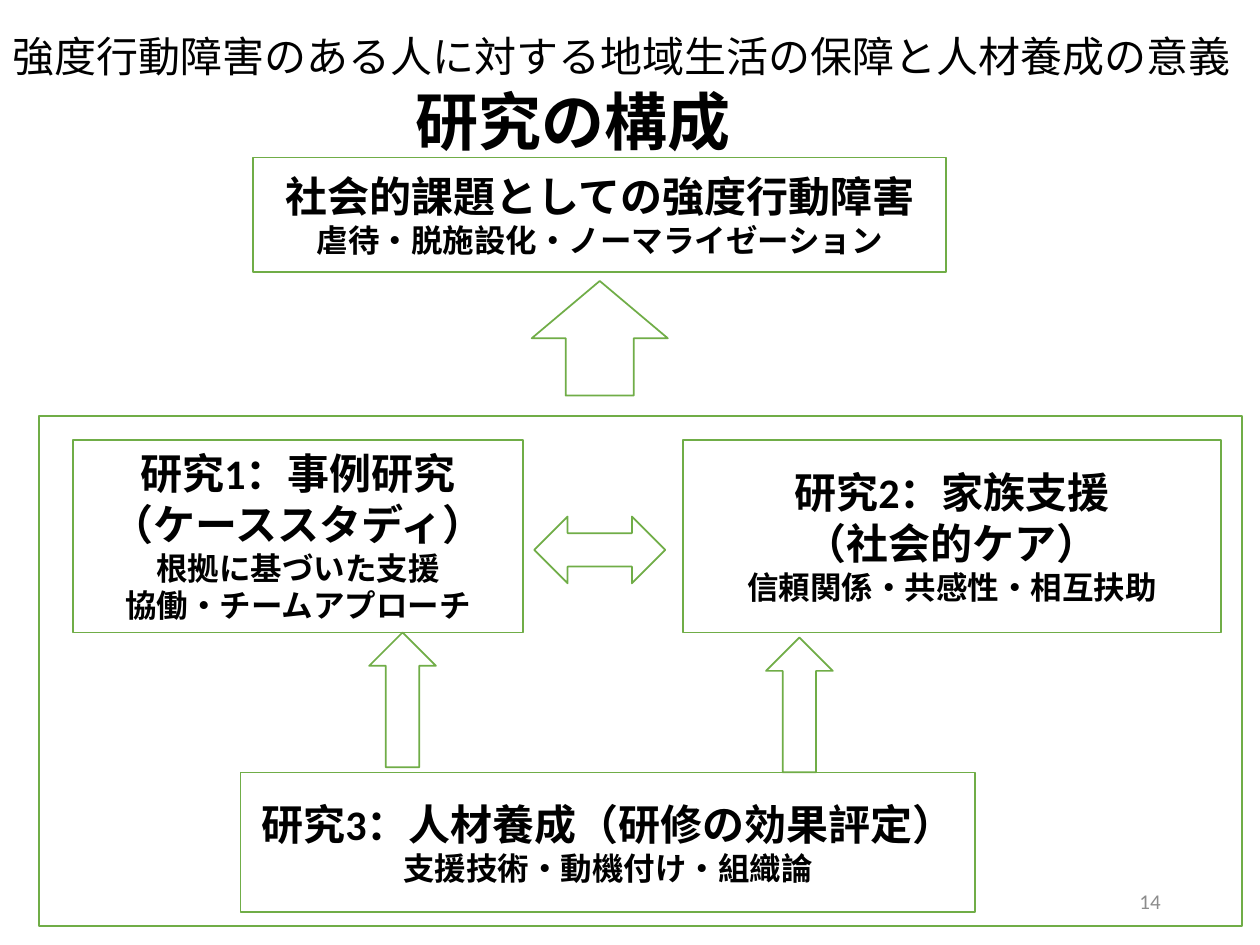
from pptx import Presentation
from pptx.dml.color import RGBColor
from pptx.enum.shapes import MSO_SHAPE
from pptx.enum.text import MSO_ANCHOR, PP_ALIGN
from pptx.util import Inches, Pt

GREEN = RGBColor(0x70, 0xAD, 0x47)
WHITE = RGBColor(0xFF, 0xFF, 0xFF)
BLACK = RGBColor(0x00, 0x00, 0x00)
GRAY = RGBColor(0x8C, 0x8C, 0x8C)
FONT = "Calibri"
HEADING, DETAIL = 24, 18

# Places are (left, top, width, height) in inches.
STUDY_TOP, STUDY_HEIGHT = 3.49, 1.53
FRAME = (0.31, 3.3, 9.55, 4.05)

# Each box: place, heading lines, detail lines
BOXES = [
    ((0.58, STUDY_TOP, 3.57, STUDY_HEIGHT),
     ["研究1：事例研究", "（ケーススタディ）"],
     ["根拠に基づいた支援", "協働・チームアプローチ"]),
    ((5.42, STUDY_TOP, 4.27, STUDY_HEIGHT),
     ["研究2：家族支援", "（社会的ケア）"],
     ["信頼関係・共感性・相互扶助"]),
    ((1.91, 6.13, 5.83, 1.11),
     ["研究3：人材養成（研修の効果評定）"],
     ["支援技術・動機付け・組織論"]),
    ((2.01, 1.25, 5.5, 0.91),
     ["社会的課題としての強度行動障害"],
     ["虐待・脱施設化・ノーマライゼーション"]),
]

ARROWS = [
    (MSO_SHAPE.LEFT_RIGHT_ARROW, (4.24, 4.1, 1.04, 0.53)),
    (MSO_SHAPE.UP_ARROW, (6.08, 5.06, 0.53, 1.07)),
    (MSO_SHAPE.UP_ARROW, (2.93, 5.02, 0.53, 1.07)),
    (MSO_SHAPE.UP_ARROW, (4.22, 2.23, 1.08, 0.91)),
]

# Each label: place, text, size, bold, colour, alignment, line spacing
LABELS = [
    ((3.2, 0.7, 3.11, 0.59), "研究の構成",
     36, True, BLACK, PP_ALIGN.LEFT, 0.9),
    ((7.06, 6.95, 2.25, 0.4), "14",
     12, False, GRAY, PP_ALIGN.RIGHT, 1.0),
    ((0, 0.17, 10, 0.59), "強度行動障害のある人に対する地域生活の保障と人材養成の意義",
     24, False, BLACK, PP_ALIGN.LEFT, 0.9),
]


def add_outlined(page, kind, place):
    shape = page.shapes.add_shape(kind, *map(Inches, place))
    shape.shadow.inherit = False
    shape.fill.solid()
    shape.fill.fore_color.rgb = WHITE
    shape.line.color.rgb = GREEN
    shape.line.width = Pt(1)
    return shape


def write_line(para, text, size, bold, color, align):
    para.text = text
    para.alignment = align
    para.font.name = FONT
    para.font.size = Pt(size)
    para.font.bold = bold
    para.font.color.rgb = color


def add_box(page, place, headings, details):
    frame = add_outlined(page, MSO_SHAPE.RECTANGLE, place).text_frame
    frame.word_wrap = True
    frame.vertical_anchor = MSO_ANCHOR.MIDDLE
    lines = [(text, HEADING) for text in headings]
    lines += [(text, DETAIL) for text in details]
    for index, (text, size) in enumerate(lines):
        para = frame.add_paragraph() if index else frame.paragraphs[0]
        write_line(para, text, size, True, BLACK, PP_ALIGN.CENTER)


def add_label(page, place, text, size, bold, color, align, spacing):
    frame = page.shapes.add_textbox(*map(Inches, place)).text_frame
    frame.word_wrap = True
    frame.vertical_anchor = MSO_ANCHOR.MIDDLE
    para = frame.paragraphs[0]
    para.line_spacing = spacing
    write_line(para, text, size, bold, color, align)


def main():
    deck = Presentation()
    deck.slide_width, deck.slide_height = Inches(10), Inches(7.5)
    page = deck.slides.add_slide(deck.slide_layouts[6])
    add_outlined(page, MSO_SHAPE.RECTANGLE, FRAME)
    for box in BOXES:
        add_box(page, *box)
    for kind, place in ARROWS:
        add_outlined(page, kind, place)
    for label in LABELS:
        add_label(page, *label)
    deck.save("out.pptx")


if __name__ == "__main__":
    main()
